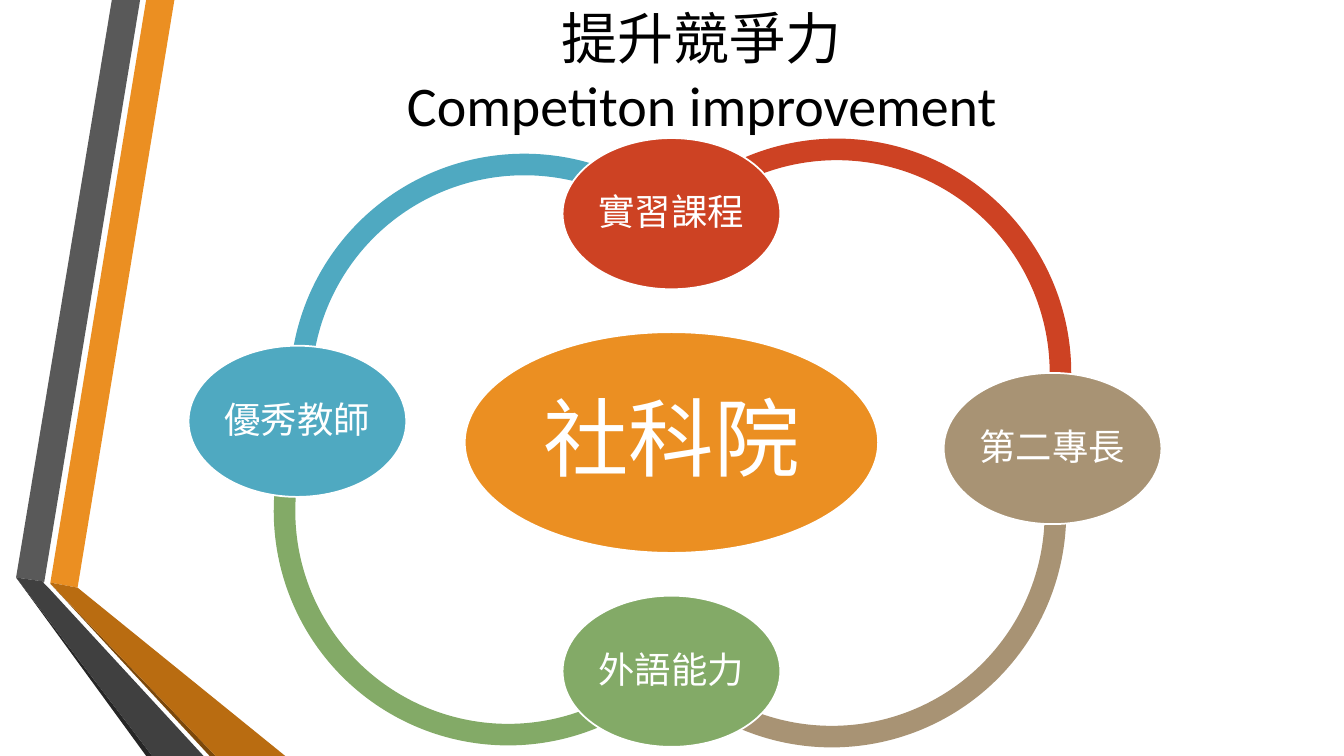
from lxml import etree
from pptx import Presentation
from pptx import util as u
from pptx.dml.color import RGBColor
from pptx.enum import shapes, text
from pptx.oxml.ns import qn

CELL = u.Inches(1)  # the slide is a grid of 13.33 columns by 7.5 rows
COLS, ROWS = 13.33, 7.5

BLACK = RGBColor(0x00, 0x00, 0x00)
WHITE = RGBColor(0xFF, 0xFF, 0xFF)
ORANGE = RGBColor(0xEB, 0x8F, 0x22)
RUST = RGBColor(0xB9, 0x6C, 0x11)
BROWN = RGBColor(0x7B, 0x48, 0x0B)
GRAY = RGBColor(0x59, 0x59, 0x59)
CHARCOAL = RGBColor(0x40, 0x40, 0x40)
INK = RGBColor(0x26, 0x26, 0x26)
BLUE = RGBColor(0x4F, 0xA9, 0xC1)
GREEN = RGBColor(0x83, 0xAA, 0x67)
TAN = RGBColor(0xA8, 0x93, 0x74)
RED = RGBColor(0xCD, 0x42, 0x23)

deck = Presentation()
deck.slide_width, deck.slide_height = int(COLS * CELL), int(ROWS * CELL)
page = deck.slides.add_slide(deck.slide_layouts[6])


def add_preset(kind, center, width, height, color):
    left, top = center[0] - width / 2, center[1] - height / 2
    shape = page.shapes.add_shape(kind, *(int(n * CELL) for n in (left, top, width, height)))
    shape.shadow.inherit = False
    shape.fill.solid()
    shape.fill.fore_color.rgb = color
    shape.line.fill.background()
    return shape


def write(shape, words, size, latin, color):
    frame = shape.text_frame
    frame.vertical_anchor = text.MSO_ANCHOR.MIDDLE
    para = frame.paragraphs[0]
    para.text = words
    para.alignment = text.PP_ALIGN.CENTER
    para.font.size = u.Pt(size)
    para.font.name = latin
    para.font.color.rgb = color
    east_asian = etree.SubElement(para._p.pPr.find(qn("a:defRPr")), qn("a:ea"))
    east_asian.set("typeface", "Noto Sans CJK SC")
    return frame


# Folded ribbons on the left edge
ribbons = [
    (ORANGE, [(0.5, 5.78), (0.77, 5.83), (1.73, 0), (1.45, 0)]),
    (GRAY, [(1.39, 0), (1.11, 0), (0.16, 5.73), (0.44, 5.77)]),
    (INK, [(0.16, 5.73), (1.45, ROWS), (1.51, ROWS)]),
    (BROWN, [(0.5, 5.79), (2.08, ROWS), (2.14, ROWS)]),
    (RUST, [(0.5, 5.79), (2.14, ROWS), (2.83, ROWS), (0.77, 5.83), (0.5, 5.78)]),
    (CHARCOAL, [(2.02, ROWS), (0.48, 5.83), (0.43, 5.78), (0.44, 5.77), (0.16, 5.73), (1.51, ROWS)]),
]
for color, corners in ribbons:
    points = [(x * 100, y * 100) for x, y in corners]
    outline = page.shapes.build_freeform(*points[0], scale=CELL / 100)
    outline.add_line_segments(points[1:], close=True)
    ribbon = outline.convert_to_shape()
    ribbon.shadow.inherit = False
    ribbon.fill.solid()
    ribbon.fill.fore_color.rgb = color
    ribbon.line.fill.background()

# Title
title = page.shapes.add_textbox(*(int(n * CELL) for n in (1.48, -0.26, 10.96, 1.92)))
title.text_frame.word_wrap = True
write(title, "提升競爭力\vCompetiton improvement", 40, "Calibri", BLACK)

# Arcs of the cycle: center, start and end angle
arcs = [
    (BLUE, (5.2, 3.85), 103.02, 186.1),
    (GREEN, (5.04, 5.07), 26.63, 121.85),
    (TAN, (8.25, 5.09), 207.3, 80.32),
    (RED, (8.3, 3.7), 134.46, 11.66),
]
for color, center, start, end in arcs:
    arc = add_preset(shapes.MSO_SHAPE.BLOCK_ARC, center, 4.65, 4.65, color)
    for index, value in enumerate((start, end, 0.046)):
        arc.adjustments[index] = value

# Hub and the four ovals around it
HUB, OVAL = (4.1, 2.19, 61, 0.08), (2.16, 1.5, 26, 0.04)
ovals = [
    ("社科院", (6.66, 4.39), ORANGE, HUB),
    ("實習課程", (6.66, 2.12), RED, OVAL),
    ("第二專長", (10.44, 4.45), TAN, OVAL),
    ("外語能力", (6.66, 6.66), GREEN, OVAL),
    ("優秀教師", (2.95, 4.18), BLUE, OVAL),
]
for words, center, color, (width, height, size, inset) in ovals:
    oval = add_preset(shapes.MSO_SHAPE.OVAL, center, width, height, color)
    oval.line.color.rgb = WHITE
    oval.line.width = u.Pt(1.25)
    frame = write(oval, words, size, "Noto Sans CJK SC", WHITE)
    frame.word_wrap = False
    frame.margin_left = frame.margin_right = int(inset * CELL)
    frame.margin_top = frame.margin_bottom = int(inset * CELL)
    frame.paragraphs[0].line_spacing = 0.9

deck.save("out.pptx")
